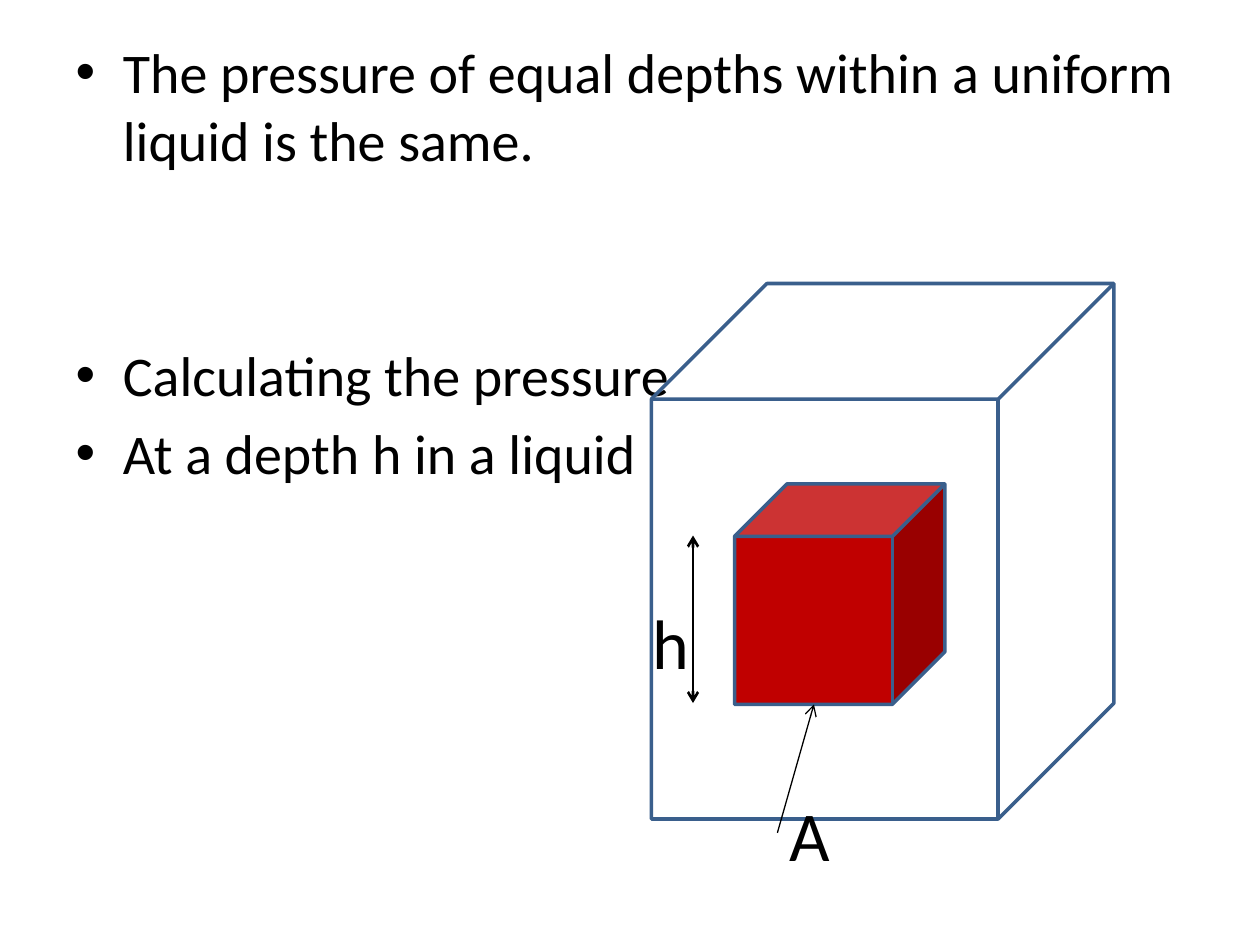
"""Build a slide on the pressure at a depth within a liquid."""
from lxml import etree
from pptx import Presentation
from pptx import util as u
from pptx.dml import color
from pptx.enum import shapes, text
from pptx.oxml import ns


def rgb(value):
    """Turn a hex string into a colour."""
    return color.RGBColor.from_string(value)


class Sheet:
    """Hold the style and the current slide."""

    font = "Calibri"
    ink = "000000"
    edge = "3A5F8C"
    red = "C00000"

    def __init__(self, slide):
        """Keep the slide to draw on."""
        self.slide = slide

    def add_words(self, paragraph, words, size):
        """Add one styled run to a paragraph."""
        run = paragraph.add_run()
        run.text = words
        run.font.name = self.font
        run.font.size = u.Pt(size)
        run.font.color.rgb = rgb(self.ink)

    def bullets(self, left, top, width, height, points):
        """Fill the body placeholder with (words, space before) points."""
        body = self.slide.placeholders[1]
        body.left, body.top = u.Inches(left), u.Inches(top)
        body.width, body.height = u.Inches(width), u.Inches(height)
        frame = body.text_frame
        for index, (words, gap) in enumerate(points):
            paragraph = frame.add_paragraph() if index else frame.paragraphs[0]
            paragraph.space_before = u.Pt(gap)
            self.add_words(paragraph, words, 32)

    def cube(self, left, top, width, height, fill=None):
        """Draw an outlined cube, hollow unless a fill is given."""
        block = self.slide.shapes.add_shape(
            shapes.MSO_SHAPE.CUBE, u.Inches(left), u.Inches(top),
            u.Inches(width), u.Inches(height))
        block.shadow.inherit = False
        if fill:
            block.fill.solid()
            block.fill.fore_color.rgb = rgb(fill)
        else:
            block.fill.background()
        block.line.color.rgb = rgb(self.edge)
        block.line.width = u.Pt(2)

    def arrow(self, start, end, weight, ends):
        """Draw a line with open arrowheads at the given ends."""
        line = self.slide.shapes.add_connector(
            shapes.MSO_CONNECTOR.STRAIGHT,
            *(u.Inches(value) for value in start + end))
        line.line.color.rgb = rgb(self.ink)
        line.line.width = u.Pt(weight)
        properties = line._element.spPr
        stroke = properties.find(ns.qn("a:ln"))
        for name in ends:
            etree.SubElement(stroke, ns.qn(f"a:{name}"), type="arrow")
        etree.SubElement(properties, ns.qn("a:effectLst"))

    def label(self, left, top, words):
        """Place a large letter."""
        box = self.slide.shapes.add_textbox(
            u.Inches(left), u.Inches(top), u.Inches(0.5), u.Inches(0.77))
        frame = box.text_frame
        frame.word_wrap = True
        frame.auto_size = text.MSO_AUTO_SIZE.SHAPE_TO_FIT_TEXT
        self.add_words(frame.paragraphs[0], words, 40)


def main():
    """Build and save the slide."""
    deck = Presentation()
    deck.slide_width, deck.slide_height = u.Inches(10), u.Inches(7.5)
    slide = deck.slides.add_slide(deck.slide_layouts[1])
    title = slide.shapes.title._element
    title.getparent().remove(title)

    sheet = Sheet(slide)
    sheet.bullets(0.5, 0.25, 9, 6.45, [
        ("The pressure of equal depths within a uniform liquid is the same.", 0),
        ("Calculating the pressure", 96),
        ("At a depth h in a liquid", 6.4),
    ])
    sheet.cube(5.17, 2.25, 3.67, 4.25)
    sheet.cube(5.83, 3.84, 1.67, 1.75, sheet.red)
    sheet.arrow((5.5, 4.25), (5.5, 5.58), 1.5, ("headEnd", "tailEnd"))
    sheet.label(5.08, 4.71, "h")
    sheet.label(6.17, 6.23, "A")
    sheet.arrow((6.17, 6.61), (6.46, 5.59), 0.75, ("tailEnd",))
    deck.save("out.pptx")


if __name__ == "__main__":
    main()
